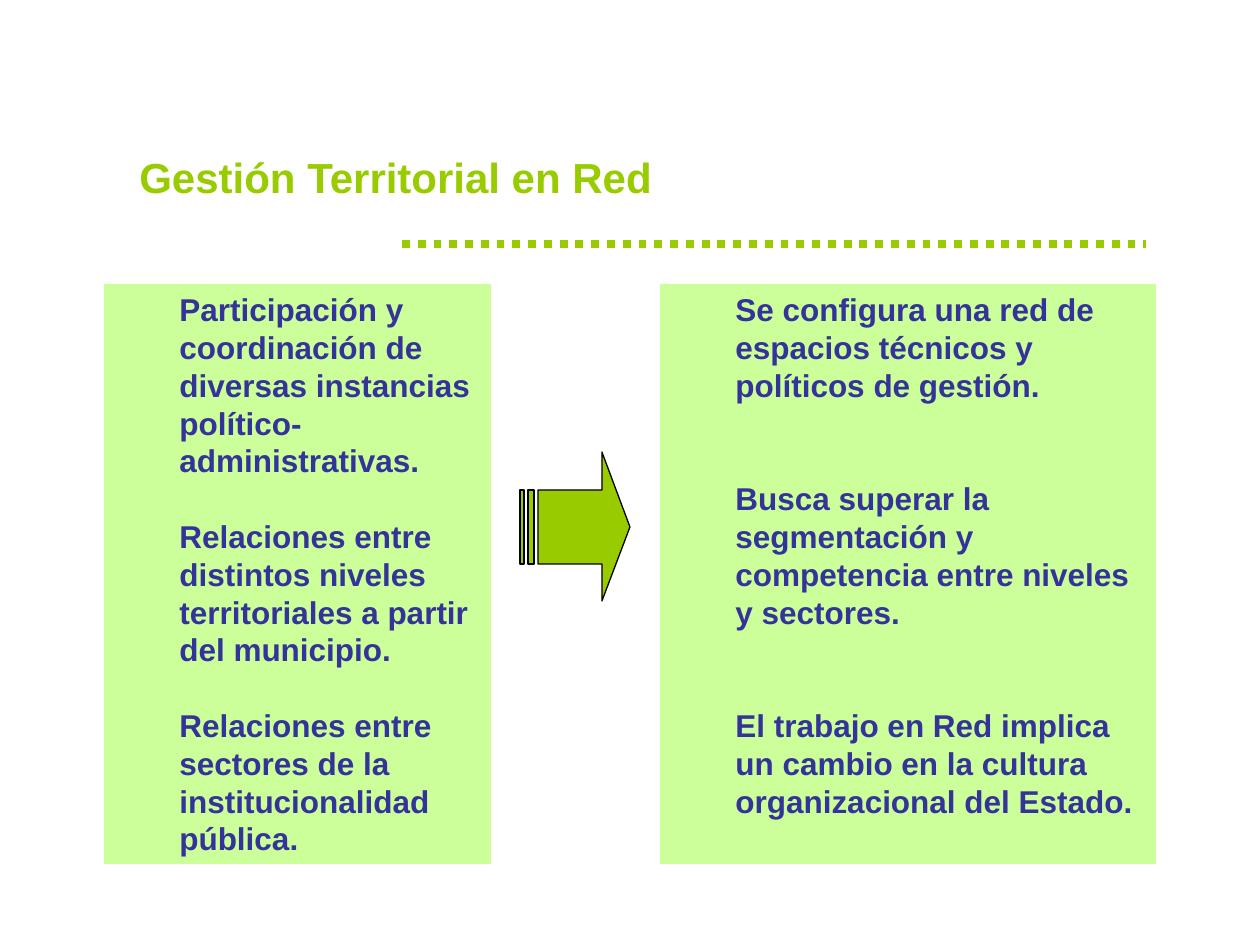
from pptx import Presentation
from pptx.dml.color import RGBColor
from pptx.enum.dml import MSO_LINE
from pptx.enum.shapes import MSO_CONNECTOR, MSO_SHAPE
from pptx.enum.text import MSO_ANCHOR, PP_ALIGN
from pptx.oxml import parse_xml
from pptx.oxml.ns import nsdecls
from pptx.util import Inches, Pt

# Content
TITLE = "Gestión Territorial en Red"
CAUSES = [
    "Participación y coordinación de diversas instancias político-administrativas.",
    "Relaciones entre distintos niveles territoriales a partir del municipio.",
    "Relaciones entre sectores de la institucionalidad pública.",
]
EFFECTS = [
    "Se configura una red de espacios técnicos y políticos de gestión.",
    "Busca superar la segmentación y competencia entre niveles y sectores.",
    "El trabajo en Red implica un cambio en la cultura organizacional del Estado.",
]
COLORS = {"green": "99CC00", "panel": "CCFF99", "text": "333399", "outline": "000000"}

# Layout in px: texts, left, width, blank lines between paragraphs
PX = Inches(1) // 126
PANEL_TOP, PANEL_HEIGHT = 284, 580
PANELS = [(EFFECTS, 660, 496, 2), (CAUSES, 104, 387, 1)]
LINE_RATIO = 1.2
SHAFT_TOP, SHAFT_BOTTOM = 490, 564
ARROW_HEAD = [(602, 452), (602, SHAFT_TOP), (538, SHAFT_TOP), (538, SHAFT_BOTTOM),
              (602, SHAFT_BOTTOM), (602, 601), (630, 527)]
ARROW_STRIPES = [(528, 534), (520, 524)]


def rgb(name):
    return RGBColor.from_string(COLORS[name])


def px(*lengths):
    return [n * PX for n in lengths]


def write(tf, texts, size, color, blank_lines=0):
    tf.word_wrap = True
    tf.vertical_anchor = MSO_ANCHOR.TOP
    pitch = size * LINE_RATIO
    for i, text in enumerate(texts):
        p = tf.paragraphs[0] if i == 0 else tf.add_paragraph()
        p.text = text
        p.level = 1
        p.alignment = PP_ALIGN.LEFT
        p.line_spacing = Pt(pitch)
        if i:
            p.space_before = Pt(pitch * blank_lines)
        pPr = p._p.get_or_add_pPr()
        pPr.set("marL", str(Inches(0.5)))
        pPr.set("indent", "0")
        p.font.name, p.font.size, p.font.bold = "Arial", Pt(size), True
        p.font.color.rgb = rgb(color)


prs = Presentation()
prs.slide_width, prs.slide_height = Inches(10), Inches(7.5)
s = prs.slides.add_slide(prs.slide_layouts[6])

# Text panels
for texts, left, width, blank_lines in PANELS:
    sp = s.shapes.add_shape(MSO_SHAPE.RECTANGLE,
                            *px(left, PANEL_TOP, width, PANEL_HEIGHT))
    sp.shadow.inherit = False
    sp.fill.solid()
    sp.fill.fore_color.rgb = rgb("panel")
    sp.line.fill.background()
    write(sp.text_frame, texts, 18, "text", blank_lines)

# Dotted rule
rule = s.shapes.add_connector(MSO_CONNECTOR.STRAIGHT, *px(402, 244, 1146, 244))
rule.line.color.rgb = rgb("green")
rule.line.width = Pt(4.5)
rule.line.dash_style = MSO_LINE.ROUND_DOT
rule._element.spPr.append(parse_xml(f"<a:effectLst {nsdecls('a')}/>"))

# Title
title = s.shapes.add_textbox(*px(64, 145, 1111, 63))
write(title.text_frame, [TITLE], 24, "green")

# Striped arrow
builder = s.shapes.build_freeform(*ARROW_HEAD[0], scale=PX)
builder.add_line_segments(ARROW_HEAD[1:])
for left, right in ARROW_STRIPES:
    builder.move_to(left, SHAFT_TOP)
    builder.add_line_segments([(left, SHAFT_BOTTOM), (right, SHAFT_BOTTOM),
                               (right, SHAFT_TOP)])
arrow = builder.convert_to_shape()
arrow.shadow.inherit = False
arrow.fill.solid()
arrow.fill.fore_color.rgb = rgb("green")
arrow.line.color.rgb = rgb("outline")
arrow.line.width = Pt(0.75)

prs.save("out.pptx")
